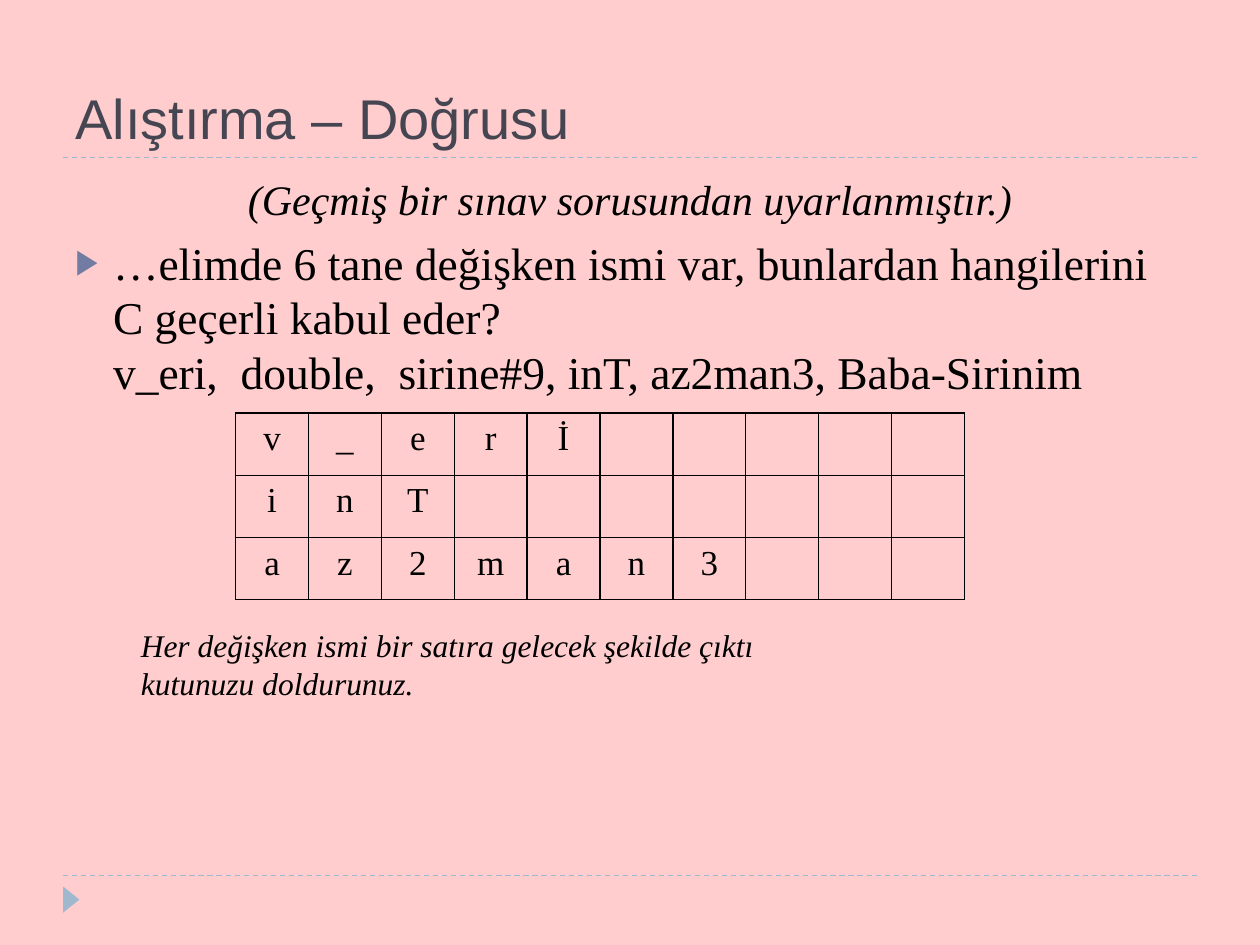
from lxml.etree import SubElement as Sub
from pptx import Presentation
from pptx.dml.color import RGBColor as RGB
from pptx.enum.dml import MSO_LINE as Dash
from pptx.enum.shapes import MSO_CONNECTOR as Conn, MSO_SHAPE as Shape
from pptx.enum.text import MSO_ANCHOR as Anchor, PP_ALIGN as Align
from pptx.oxml.ns import qn
from pptx.util import Cm, Pt

SERIF = "Times New Roman"
PALE = "9FB8CD"
HANG = Cm(0.76)
ROWS = ["v_erİ", "inT", "az2man3"]
COLS = 10


def hue(code):
    return RGB.from_string(code)


def style(para, code="000000", **form):
    for run in para.runs:
        run.font.color.rgb = hue(code)
        for key, val in form.items():
            setattr(run.font, key, val)


def hang(para):
    props = para._p.get_or_add_pPr()
    props.set("marL", str(HANG))
    props.set("indent", str(-HANG))
    return props


def bullet(props):
    tint = Sub(props, qn("a:buClr"))
    Sub(tint, qn("a:srgbClr"), val="727CA3")
    Sub(props, qn("a:buSzPct"), val="76000")
    Sub(props, qn("a:buFont"), typeface="Arial")
    Sub(props, qn("a:buChar"), char="▶")


def frame(slide, box, anchor=Anchor.TOP):
    text = slide.shapes.add_textbox(*map(Cm, box)).text_frame
    text.word_wrap = True
    text.vertical_anchor = anchor
    return text


def rule(slide, left, top, width):
    ends = map(Cm, (left, top, left + width, top))
    line = slide.shapes.add_connector(Conn.STRAIGHT, *ends)
    line.line.color.rgb = hue(PALE)
    line.line.width = Pt(0.75)
    line.line.dash_style = Dash.DASH
    Sub(line._element.spPr, qn("a:effectLst"))


def marker(slide, box):
    mark = slide.shapes.add_shape(Shape.ISOSCELES_TRIANGLE, *map(Cm, box))
    mark.rotation = 90
    mark.shadow.inherit = False
    mark.fill.solid()
    mark.fill.fore_color.rgb = hue(PALE)
    mark.line.fill.background()


def title(slide, box):
    para = frame(slide, box, Anchor.BOTTOM).paragraphs[0]
    para.text = "Alıştırma – Doğrusu"
    style(para, "464653", name="Arial", size=Pt(32))


def body(slide, box):
    text = frame(slide, box)
    note, task = text.paragraphs[0], text.add_paragraph()
    note.text = "(Geçmiş bir sınav sorusundan uyarlanmıştır.)"
    note.alignment = Align.CENTER
    task.text = ("…elimde 6 tane değişken ismi var, bunlardan hangilerini "
                 "C geçerli kabul eder? \v"
                 "v_eri,  double,  sirine#9, inT, az2man3, Baba-Sirinim")
    for para in (note, task):
        para.space_before = Pt(6)
        hang(para)
    bullet(task._p.pPr)
    style(note, name=SERIF, size=Pt(24), italic=True)
    style(task, name=SERIF, size=Pt(26))


def border(cell):
    props = cell._tc.get_or_add_tcPr()
    for side in ("lnL", "lnR", "lnT", "lnB"):
        line = Sub(props, qn(f"a:{side}"), w=str(Pt(1)))
        fill = Sub(line, qn("a:solidFill"))
        Sub(fill, qn("a:srgbClr"), val="000000")


def grid(slide, box):
    """Table with one letter of a name in each cell, one name a row."""
    table = slide.shapes.add_table(len(ROWS), COLS, *map(Cm, box)).table
    table.first_row = table.horz_banding = False
    for r, word in enumerate(ROWS):
        for c, sign in enumerate(word.ljust(COLS)):
            cell = table.cell(r, c)
            border(cell)
            cell.fill.background()
            para = cell.text_frame.paragraphs[0]
            para.text = sign.strip()
            para.alignment = Align.CENTER
            style(para, name=SERIF, size=Pt(20))


def hint(slide, box):
    para = frame(slide, box).paragraphs[0]
    para.text = ("Her değişken ismi bir satıra gelecek şekilde çıktı "
                 "kutunuzu doldurunuz.")
    style(para, name=SERIF, size=Pt(18), italic=True)


def main():
    deck = Presentation()
    deck.slide_width, deck.slide_height = Cm(25.4), Cm(19.05)
    slide = deck.slides.add_slide(deck.slide_layouts[6])
    back = slide.background.fill
    back.solid()
    back.fore_color.rgb = hue("FFCDCD")
    for top in (17.65, 3.17):
        rule(slide, 1.27, top, 22.86)
    marker(slide, (1.17, 17.97, 0.53, 0.33))
    title(slide, (1.27, 0.43, 22.86, 2.74))
    body(slide, (1.27, 3.38, 22.86, 13.72))
    grid(slide, (4.75, 8.33, 14.69, 3.76))
    hint(slide, (2.59, 12.5, 15.09, 1.8))
    deck.save("out.pptx")


if __name__ == "__main__":
    main()
